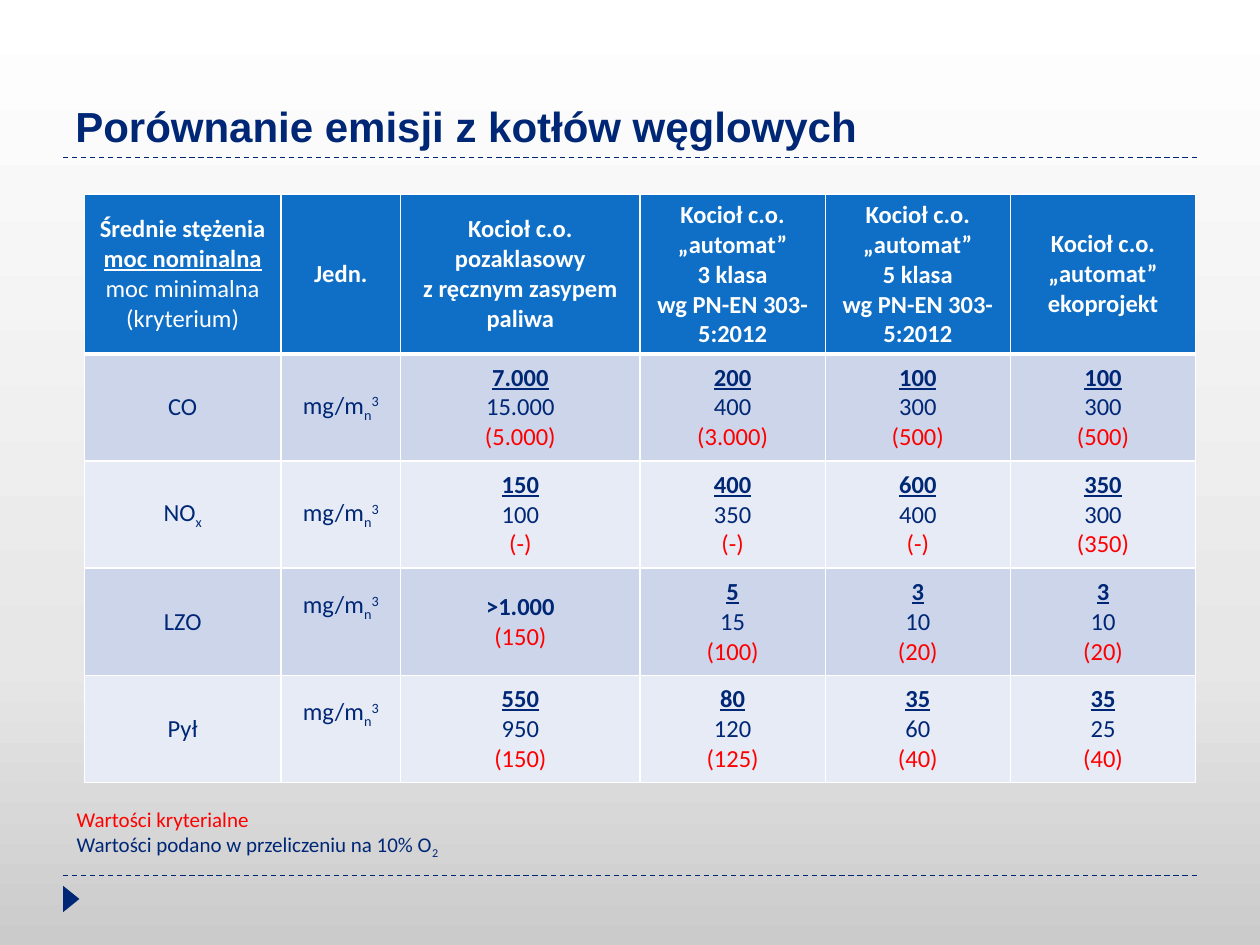
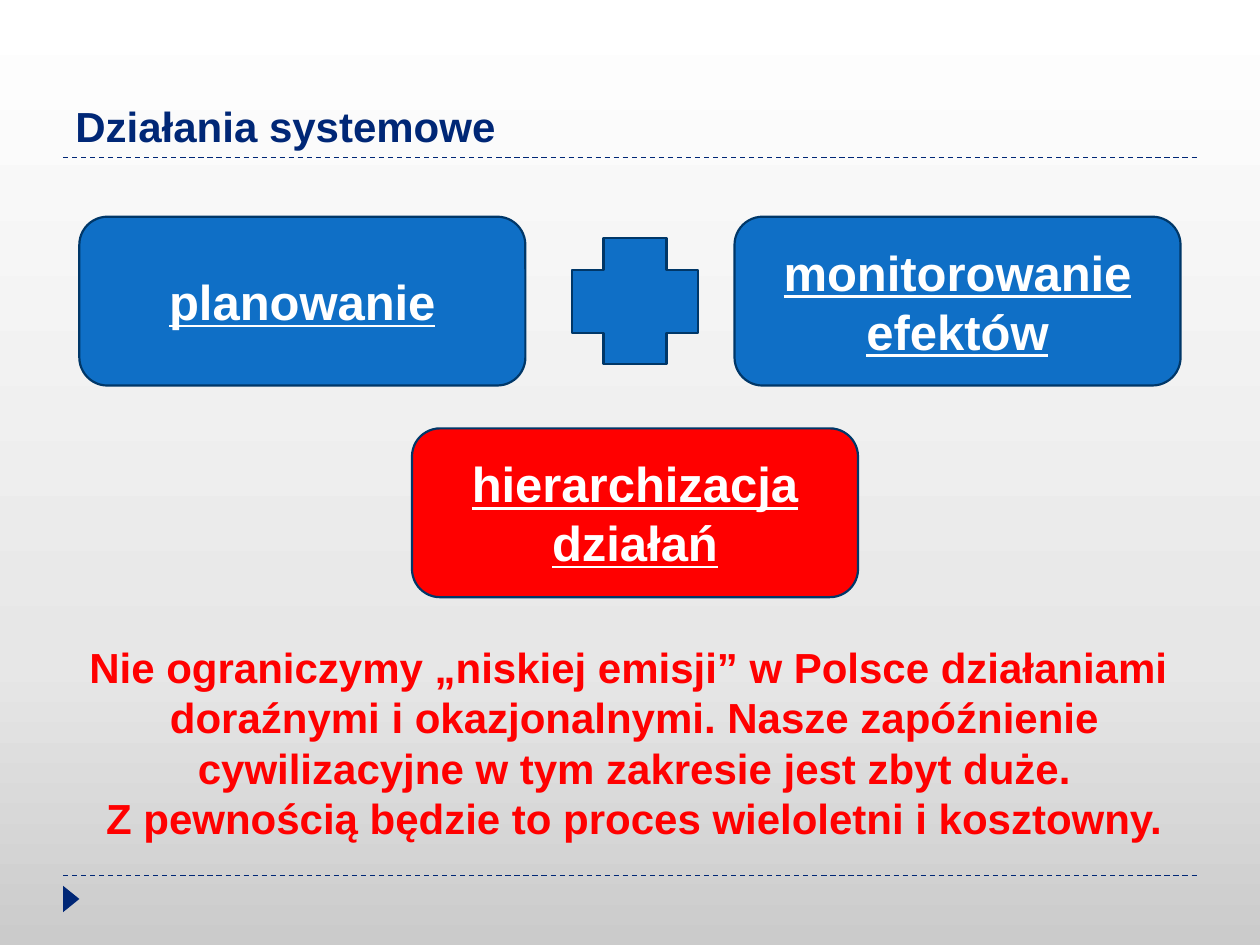
import copy
import dataclasses

import lxml.etree
import pptx
import pptx.dml.color
import pptx.enum.dml
import pptx.enum.shapes
import pptx.enum.text
import pptx.oxml.ns
import pptx.util

Inches = pptx.util.Inches
Pt = pptx.util.Pt
qn = pptx.oxml.ns.qn
Shape = pptx.enum.shapes.MSO_SHAPE
Anchor = pptx.enum.text.MSO_ANCHOR
Align = pptx.enum.text.PP_ALIGN


@dataclasses.dataclass(frozen=True)
class Theme:
    navy: str = "002776"
    blue: str = "0F6FC6"
    edge: str = "003768"
    red: str = "FF0000"
    white: str = "FFFFFF"
    bands: tuple = ("CCD5EA", "E7EBF5")
    back: tuple = ((0, "FFFFFF"), (0.7, "E7E7E7"), (1, "CBCBCB"))
    head: str = "Arial"
    body: str = "Calibri"
    title: int = 24
    label: int = 28
    cell: int = 14
    note: int = 12


THEME = Theme()

TITLES = ("Porównanie emisji z kotłów węglowych", "Działania systemowe")
NORM = "wg PN-EN 303-5:2012"
AUTO = ["Kocioł c.o.", "„automat”"]
HEADS = (
    ["Średnie stężenia", "moc nominalna", "moc minimalna", "(kryterium)"],
    ["Jedn."],
    ["Kocioł c.o.", "pozaklasowy", "z ręcznym zasypem paliwa"],
    AUTO + ["3 klasa", NORM],
    AUTO + ["5 klasa", NORM],
    AUTO + ["ekoprojekt"],
)
# Each value cell: nominal power, minimum power, (criterion)
ROWS = (
    ("CO", "7.000 15.000 (5.000)", "200 400 (3.000)", "100 300 (500)", "100 300 (500)"),
    ("NO_x", "150 100 (-)", "400 350 (-)", "600 400 (-)", "350 300 (350)"),
    ("LZO", ">1.000 (150)", "5 15 (100)", "3 10 (20)", "3 10 (20)"),
    ("Pył", "550 950 (150)", "80 120 (125)", "35 60 (40)", "35 25 (40)"),
)
UNIT = "mg/m_n^3"
RAISED = ("LZO", "Pył")  # rows whose unit sits higher
COLS = (1.56, 0.95, 1.9, 1.47, 1.47, 1.47)
HEAD_H, ROW_H = 1.27, 0.85
CLAIM = (
    "Nie ograniczymy „niskiej emisji” w Polsce działaniami ",
    "doraźnymi i okazjonalnymi. Nasze zapóźnienie cywilizacyjne w tym zakresie jest zbyt duże.",
    "Z pewnością będzie to proces wieloletni i kosztowny.",
)


def rgb(tone):
    return pptx.dml.color.RGBColor.from_string(tone)


def style(para, size, face, tone, bold=False, under=False, align=None):
    """Format every run of a paragraph."""
    para.alignment = align
    for run in para.runs:
        font = run.font
        font.size, font.name = Pt(size), face
        font.bold, font.underline = bold, under
        font.color.rgb = rgb(tone)


def index(para, text):
    """Write text in which _ lowers and ^ raises the next character."""
    plain = ""
    shift = None
    for char in text + "\n":
        if char in "_^\n" or shift:
            if plain:
                para.add_run().text = plain
                plain = ""
            if shift:
                run = para.add_run()
                run.text = char
                run.font._element.set("baseline", shift)
                shift = None
            else:
                shift = {"_": "-25000", "^": "30000"}.get(char)
        else:
            plain += char


def lines(frame, texts):
    """Fill a frame with one paragraph per text."""
    frame.text = "\n".join(texts)
    return frame.paragraphs


def area(slide, box, anchor=Anchor.TOP):
    frame = slide.shapes.add_textbox(*map(Inches, box)).text_frame
    frame.word_wrap = True
    frame.vertical_anchor = anchor
    return frame


def solid(slide, kind, box, fill, line=None):
    shape = slide.shapes.add_shape(kind, *map(Inches, box))
    shape.shadow.inherit = False
    shape.fill.solid()
    shape.fill.fore_color.rgb = rgb(fill)
    if line:
        shape.line.color.rgb = rgb(line)
        shape.line.width = Pt(1.25)
    else:
        shape.line.fill.background()
    return shape


def rule(slide, left, top, width):
    line = slide.shapes.add_connector(
        pptx.enum.shapes.MSO_CONNECTOR.STRAIGHT,
        Inches(left), Inches(top), Inches(left + width), Inches(top))
    line.line.color.rgb = rgb(THEME.navy)
    line.line.width = Pt(0.75)
    line.line.dash_style = pptx.enum.dml.MSO_LINE.DASH
    lxml.etree.SubElement(line._element.spPr, qn("a:effectLst"))


def shade(slide):
    """Three-stop background running from top to bottom."""
    fill = slide.background.fill
    fill.gradient()
    fill.gradient_angle = 270
    stops = next(slide._element.iter(qn("a:gsLst")))
    stops.append(copy.deepcopy(stops[-1]))
    for stop, (place, tone) in zip(fill.gradient_stops, THEME.back):
        stop.position = place
        stop.color.rgb = rgb(tone)


def base(deck, title, box=(0.5, 0.17, 9, 6.78)):
    """Blank slide with background, title, rules and corner marker."""
    slide = deck.slides.add_slide(deck.slide_layouts[6])
    shade(slide)
    left, top, width, height = box
    band = 1.08
    for level in (top + height, top + band):
        rule(slide, left, level, width)
    mark = solid(slide, Shape.ISOSCELES_TRIANGLE,
                 (left - 0.04, top + height + 0.12, 0.21, 0.13), THEME.navy)
    mark.rotation = 90
    frame = area(slide, (left, top, width, band), Anchor.BOTTOM)
    style(lines(frame, [title])[0], THEME.title, THEME.head, THEME.navy, True)
    return slide


def border(cell, top, low):
    """White cell edges; top and low are widths in points."""
    props = cell._tc.get_or_add_tcPr()
    edges = (("a:lnL", 1), ("a:lnR", 1), ("a:lnT", top), ("a:lnB", low))
    for spot, (tag, width) in enumerate(edges):
        edge = lxml.etree.Element(qn(tag), w=str(Pt(width)))
        fill = lxml.etree.SubElement(edge, qn("a:solidFill"))
        lxml.etree.SubElement(fill, qn("a:srgbClr"), val=THEME.white)
        props.insert(spot, edge)


def paint(cell, fill, top=1, low=1):
    cell.fill.solid()
    cell.fill.fore_color.rgb = rgb(fill)
    cell.vertical_anchor = Anchor.MIDDLE
    border(cell, top, low)


def ink(para, tone, bold=False, under=False):
    style(para, THEME.cell, THEME.body, tone, bold, under, Align.CENTER)


def grid(slide, box):
    """Emission table: header row, then one band per pollutant."""
    table = slide.shapes.add_table(
        len(ROWS) + 1, len(COLS), *map(Inches, box)).table
    for col, width in zip(table.columns, COLS):
        col.width = Inches(width)
    for num, row in enumerate(table.rows):
        row.height = Inches(ROW_H if num else HEAD_H)

    # Header
    for col, texts in enumerate(HEADS):
        cell = table.cell(0, col)
        paint(cell, THEME.blue, low=3)
        for num, para in enumerate(lines(cell.text_frame, texts)):
            ink(para, THEME.white, col > 0 or num < 2, col == 0 and num == 1)

    # Pollutants
    for num, (name, *values) in enumerate(ROWS, 1):
        for col in range(len(COLS)):
            cell = table.cell(num, col)
            paint(cell, THEME.bands[(num - 1) % 2], top=3 if num == 1 else 1)
            if col < 2:
                para = cell.text_frame.paragraphs[0]
                index(para, UNIT if col else name)
                ink(para, THEME.navy)
                if col and name in RAISED:
                    cell.margin_bottom = Inches(0.29)
                continue
            parts = values[col - 2].split()
            for spot, para in enumerate(lines(cell.text_frame, parts)):
                tone = THEME.red if para.text.startswith("(") else THEME.navy
                ink(para, tone, spot == 0, spot == 0 and len(parts) == 3)


def notes(slide, box):
    """Key below the table."""
    frame = area(slide, box)
    key = frame.paragraphs[0]
    key.text = "Wartości kryterialne"
    style(key, THEME.note, THEME.body, THEME.red)
    para = frame.add_paragraph()
    index(para, "Wartości podano w przeliczeniu na 10% O_2")
    style(para, THEME.note, THEME.body, THEME.navy)


def card(slide, box, text, fill):
    shape = solid(slide, Shape.ROUNDED_RECTANGLE, box, fill, THEME.edge)
    frame = shape.text_frame
    frame.word_wrap = True
    frame.vertical_anchor = Anchor.MIDDLE
    style(lines(frame, [text])[0], THEME.label, THEME.head, THEME.white,
          True, True, Align.CENTER)


def tasks(slide, box):
    """Two cards joined by a plus, and a third card below."""
    left, top, width, height = box
    wide, tall, plus = 3.54, 1.34, 1
    card(slide, (left + 2.64, top + height - tall, wide, tall),
         "hierarchizacja działań", THEME.red)
    card(slide, (left + width - wide, top, wide, tall),
         "monitorowanie efektów", THEME.blue)
    card(slide, (left, top, wide, tall), "planowanie", THEME.blue)
    solid(slide, Shape.CROSS,
          (left + 3.91, top + (tall - plus) / 2, plus, plus),
          THEME.blue, THEME.edge)


def claim(slide, box):
    """Closing statement."""
    for para in lines(area(slide, box), CLAIM):
        style(para, THEME.title, THEME.head, THEME.red, True,
              align=Align.CENTER)


def main():
    deck = pptx.Presentation()
    deck.slide_width, deck.slide_height = Inches(10), Inches(7.5)

    # Emission comparison
    slide = base(deck, TITLES[0])
    grid(slide, (0.67, 1.54, sum(COLS), HEAD_H + len(ROWS) * ROW_H))
    notes(slide, (0.51, 6.35, 9.21, 0.5))

    # System measures
    slide = base(deck, TITLES[1])
    tasks(slide, (0.63, 1.72, 8.74, 3.02))
    claim(slide, (0.47, 5.04, 9.13, 1.72))

    deck.save("out.pptx")


if __name__ == "__main__":
    main()
